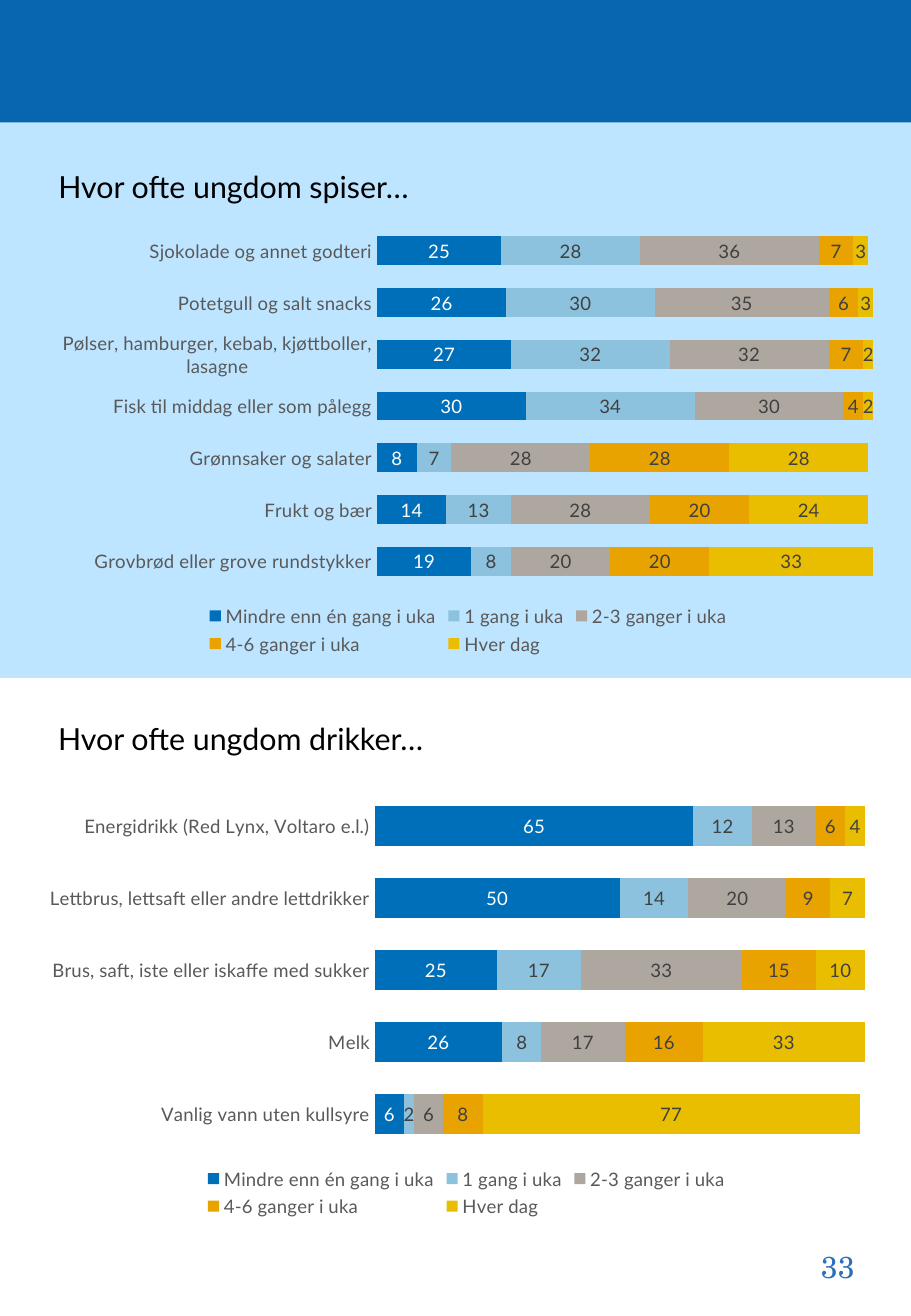
from lxml import etree
from pptx import Presentation
from pptx.chart.data import CategoryChartData
from pptx.dml.color import RGBColor
from pptx.enum.chart import XL_CHART_TYPE, XL_LEGEND_POSITION, XL_TICK_MARK
from pptx.enum.shapes import MSO_SHAPE
from pptx.enum.text import MSO_ANCHOR, MSO_AUTO_SIZE, PP_ALIGN
from pptx.oxml.ns import qn
from pptx.util import Inches, Pt

BAR_STACKED = XL_CHART_TYPE.BAR_STACKED
BOTTOM = XL_LEGEND_POSITION.BOTTOM
NO_TICK = XL_TICK_MARK.NONE
RECT = MSO_SHAPE.RECTANGLE
TOP = MSO_ANCHOR.TOP
GROW = MSO_AUTO_SIZE.SHAPE_TO_FIT_TEXT
LEFT = PP_ALIGN.LEFT

BODY_FONT = "Lato"
NUMBER_FONT = "TeX Gyre Schola"
GREY = "595959"
FREQUENCIES = [
    ("Mindre enn én gang i uka", "006FBA", "FFFFFF"),
    ("1 gang i uka", "8CC2DE", "404040"),
    ("2-3 ganger i uka", "AEA79F", "404040"),
    ("4-6 ganger i uka", "E8A300", "404040"),
    ("Hver dag", "EABE00", "404040"),
]
FOOD = {
    "Grovbrød eller grove rundstykker": (19, 8, 20, 20, 33),
    "Frukt og bær": (14, 13, 28, 20, 24),
    "Grønnsaker og salater": (8, 7, 28, 28, 28),
    "Fisk til middag eller som pålegg": (30, 34, 30, 4, 2),
    "Pølser, hamburger, kebab, kjøttboller, lasagne": (27, 32, 32, 7, 2),
    "Potetgull og salt snacks": (26, 30, 35, 6, 3),
    "Sjokolade og annet godteri": (25, 28, 36, 7, 3),
}
DRINKS = {
    "Vanlig vann uten kullsyre": (6, 2, 6, 8, 77),
    "Melk": (26, 8, 17, 16, 33),
    "Brus, saft, iste eller iskaffe med sukker": (25, 17, 33, 15, 10),
    "Lettbrus, lettsaft eller andre lettdrikker": (50, 14, 20, 9, 7),
    "Energidrikk (Red Lynx, Voltaro e.l.)": (65, 12, 13, 6, 4),
}


def rgb(value):
    """Turn a hex string into a colour."""
    return RGBColor.from_string(value)


def style_font(font, size=11, color=GREY, name=BODY_FONT):
    """Set size, colour and typeface of a font."""
    font.size = Pt(size)
    font.name = name
    font.bold = False
    font.color.rgb = rgb(color)


def write(sp, text, wrap=True, **style):
    """Write one formatted line into a shape that grows with its text."""
    tf = sp.text_frame
    tf.word_wrap = wrap
    tf.auto_size = GROW
    tf.vertical_anchor = TOP
    p = tf.paragraphs[0]
    p.alignment = LEFT
    r = p.add_run()
    r.text = text
    style_font(r.font, **style)


def place_plot(chart, x, y, w, h):
    """Fix the inner plot area as fractions of the chart."""
    plot_area = chart.element.find(".//" + qn("c:plotArea"))
    for old in plot_area.findall(qn("c:layout")):
        plot_area.remove(old)
    layout = etree.Element(qn("c:layout"))
    manual = etree.SubElement(layout, qn("c:manualLayout"))
    settings = {"layoutTarget": "inner", "xMode": "edge", "yMode": "edge",
                "x": x, "y": y, "w": w, "h": h}
    for tag, value in settings.items():
        etree.SubElement(manual, qn("c:" + tag)).set("val", str(value))
    plot_area.insert(0, layout)


class Page:
    """A report page with its elements."""

    def __init__(self, prs):
        """Add a title-only slide."""
        self.s = prs.slides.add_slide(prs.slide_layouts[5])

    def band(self, top, height, color):
        """Add a full-width colour band."""
        sp = self.s.shapes.add_shape(RECT, 0, Inches(top), Inches(7.5), Inches(height))
        sp.shadow.inherit = False
        sp.fill.solid()
        sp.fill.fore_color.rgb = rgb(color)
        sp.line.fill.background()

    def text(self, text, x, y, w, h, **style):
        """Add a text box."""
        sp = self.s.shapes.add_textbox(Inches(x), Inches(y), Inches(w), Inches(h))
        write(sp, text, **style)

    def title(self, text, x, y, w, h, **style):
        """Place the title in front of the bands."""
        sp = self.s.shapes.title
        sp.element.getparent().append(sp.element)
        sp.left, sp.top, sp.width, sp.height = map(Inches, (x, y, w, h))
        write(sp, text, **style)

    def chart(self, rows, x, y, w, h, plot_width):
        """Add a stacked bar chart of frequencies."""
        data = CategoryChartData(number_format="0")
        data.categories = list(rows)
        for (name, _, _), values in zip(FREQUENCIES, zip(*rows.values())):
            data.add_series(name, values)
        frame = self.s.shapes.add_chart(
            BAR_STACKED, Inches(x), Inches(y), Inches(w), Inches(h), data)
        chart = frame.chart
        style_font(chart.font, color="000000")
        chart.has_title = False
        chart.has_legend = True
        chart.legend.position = BOTTOM
        chart.legend.include_in_layout = False
        style_font(chart.legend.font)

        axis = chart.category_axis
        axis.major_tick_mark = axis.minor_tick_mark = NO_TICK
        axis.format.line.fill.background()
        style_font(axis.tick_labels.font)
        scale = chart.value_axis
        scale.minimum_scale, scale.maximum_scale = 0, 100
        scale.has_major_gridlines = False
        scale.visible = False

        plot = chart.plots[0]
        plot.gap_width, plot.overlap = 80, 100
        plot.vary_by_categories = False
        for series, (_, fill, label) in zip(plot.series, FREQUENCIES):
            series.format.fill.solid()
            series.format.fill.fore_color.rgb = rgb(fill)
            labels = series.data_labels
            labels.show_value = True
            labels.number_format = "0"
            labels.number_format_is_linked = False
            style_font(labels.font, color=label)
        place_plot(chart, 0.391, 0.017, plot_width, 0.819)


def main():
    """Build the page on eating and drinking habits."""
    prs = Presentation()
    prs.slide_width, prs.slide_height = Inches(7.5), Inches(10.83)
    page = Page(prs)
    heading = {"size": 18, "color": "000000"}
    page.band(0, 1.01, "0866B1")
    page.band(1.01, 4.57, "BEE5FF")
    page.text("33", 6.66, 10.22, 0.48, 0.4, wrap=False,
              size=18, color="296FB9", name=NUMBER_FONT)
    page.title("Hvor ofte ungdom spiser…", 0.38, 1.33, 6.63, 0.4, **heading)
    page.chart(FOOD, 0.41, 1.79, 6.89, 3.64, 0.593)
    page.text("Hvor ofte ungdom drikker…", 0.38, 5.88, 6.63, 0.4, **heading)
    page.chart(DRINKS, 0.38, 6.44, 6.92, 3.62, 0.583)
    prs.save("out.pptx")


if __name__ == "__main__":
    main()
